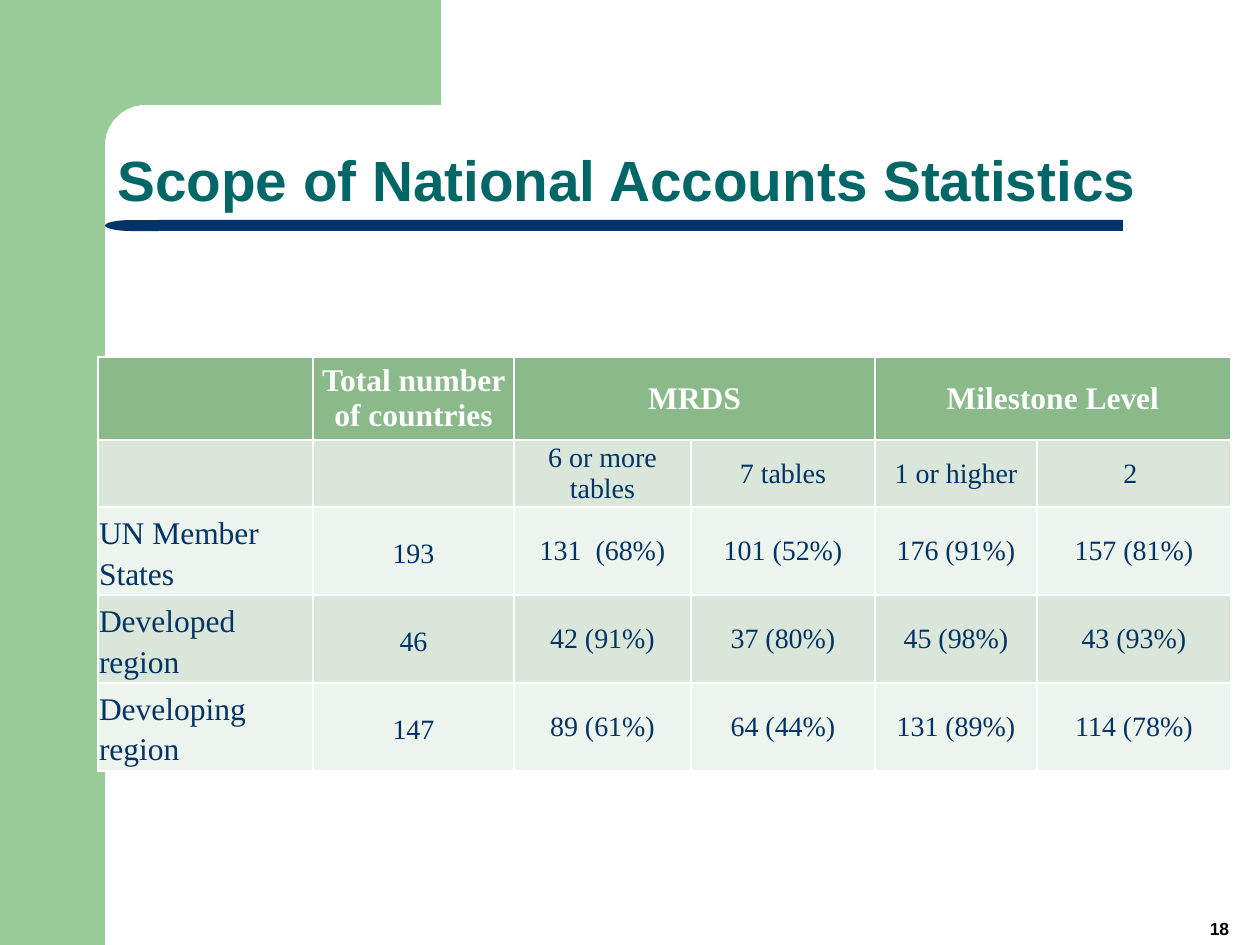
from math import cos, pi, sin

from pptx import Presentation
from pptx.dml.color import RGBColor
from pptx.enum.shapes import MSO_SHAPE
from pptx.enum.text import MSO_ANCHOR, PP_ALIGN
from pptx.util import Pt

PX = 914400 / 126
LEFT, CENTER = PP_ALIGN.LEFT, PP_ALIGN.CENTER
MIDDLE, BOTTOM = MSO_ANCHOR.MIDDLE, MSO_ANCHOR.BOTTOM
RECTANGLE, DELAY = MSO_SHAPE.RECTANGLE, MSO_SHAPE.FLOWCHART_DELAY

COLORS = {
    "frame": "99CC99", "rule": "003366", "title": "006666", "number": "000000",
    "header": "8AB98A", "header_text": "FFFFFF", "body_text": "003366",
    "band_dark": "DAE6DA", "band_light": "EDF3ED",
}

TITLE = "Scope of National Accounts Statistics"
PAGE_NUMBER = "18"
ROWS = [
    ["", "Total number of countries", "MRDS", "", "Milestone Level", ""],
    ["", "", "6 or more tables", "7 tables", "1 or higher", "2 "],
    ["UN Member States", "193", "131  (68%)", "101 (52%)", "176 (91%)", "157 (81%)"],
    ["Developed \nregion", "46", "42 (91%)", "37 (80%)", "45 (98%)", "43 (93%)"],
    ["Developing \nregion", "147", "89 (61%)", "64 (44%)", "131 (89%)", "114 (78%)"],
]
COLUMN_WIDTHS = [215, 201, 177, 184, 162, 194]
ROW_HEIGHTS = [83, 62, 81, 81, 81]
HEADER_SPANS = [(2, 3), (4, 5)]


def px(*lengths):
    return [round(length * PX) for length in lengths]


def color(name):
    return RGBColor.from_string(COLORS[name])


def paint(shape, name):
    shape.shadow.inherit = False
    shape.fill.solid()
    shape.fill.fore_color.rgb = color(name)
    shape.line.fill.background()


def add_block(slide, kind, box, name):
    block = slide.shapes.add_shape(kind, *px(*box))
    paint(block, name)
    return block


def write(paragraph, text, font, size, name, bold, align, spacing=None):
    paragraph.text = text
    paragraph.alignment = align
    paragraph.line_spacing = spacing
    paragraph.font.name = font
    paragraph.font.size = Pt(size)
    paragraph.font.bold = bold
    paragraph.font.color.rgb = color(name)


def add_label(slide, box, text, *style):
    frame = slide.shapes.add_textbox(*px(*box)).text_frame
    frame.word_wrap = True
    frame.vertical_anchor = BOTTOM
    write(frame.paragraphs[0], text, "Arial", *style)


def add_frame(slide):
    add_block(slide, RECTANGLE, (0, 0, 105, 945), "frame")
    edge, radius, steps = 105, 41, 24
    center = edge + radius
    angles = [pi / 2 * step / steps for step in range(steps + 1)]
    arc = [(center - radius * sin(a), center - radius * cos(a)) for a in angles]
    outline = [(441, 0), (441, edge), *arc, (edge, 161), (63, 161)]
    builder = slide.shapes.build_freeform(63, 0, scale=PX)
    builder.add_line_segments(outline, close=True)
    paint(builder.convert_to_shape(), "frame")


def add_rule(slide):
    add_block(slide, RECTANGLE, (157, 220, 966, 11), "rule")
    cap = add_block(slide, DELAY, (105, 220, 54, 11), "rule")
    cap.rotation = 180


def fill_cell(cell, text, row, column):
    header = row == 0
    cell.fill.solid()
    band = "band_dark" if row % 2 else "band_light"
    cell.fill.fore_color.rgb = color("header" if header else band)
    if not text:
        return
    label = row > 1 and column == 0
    inset = 1 if row > 1 and column < 2 else 0
    cell.vertical_anchor = MIDDLE
    cell.margin_left, cell.margin_right, cell.margin_top = px(inset, inset, inset)
    cell.margin_bottom = 0
    write(cell.text_frame.paragraphs[0], text, "Times New Roman",
          18 if header or label else 16,
          "header_text" if header else "body_text", header,
          LEFT if label else CENTER, 1.15 if inset else None)


def add_statistics(slide):
    box = px(98, 357, sum(COLUMN_WIDTHS), sum(ROW_HEIGHTS))
    table = slide.shapes.add_table(len(ROWS), len(COLUMN_WIDTHS), *box).table
    for column, width in zip(table.columns, px(*COLUMN_WIDTHS)):
        column.width = width
    for row, height in zip(table.rows, px(*ROW_HEIGHTS)):
        row.height = height
    for first, last in HEADER_SPANS:
        table.cell(0, first).merge(table.cell(0, last))
    for r, texts in enumerate(ROWS):
        for c, text in enumerate(texts):
            fill_cell(table.cell(r, c), text, r, c)


def main():
    deck = Presentation()
    deck.slide_width, deck.slide_height = px(1260, 945)
    slide = deck.slides.add_slide(deck.slide_layouts[6])
    add_frame(slide)
    add_rule(slide)
    add_label(slide, (105, 63, 1092, 157), TITLE, 32.4, "title", True, LEFT, 0.9)
    add_label(slide, (1179, 903, 81, 42), PAGE_NUMBER, 10, "number", True, CENTER)
    add_statistics(slide)
    deck.save("out.pptx")


if __name__ == "__main__":
    main()
